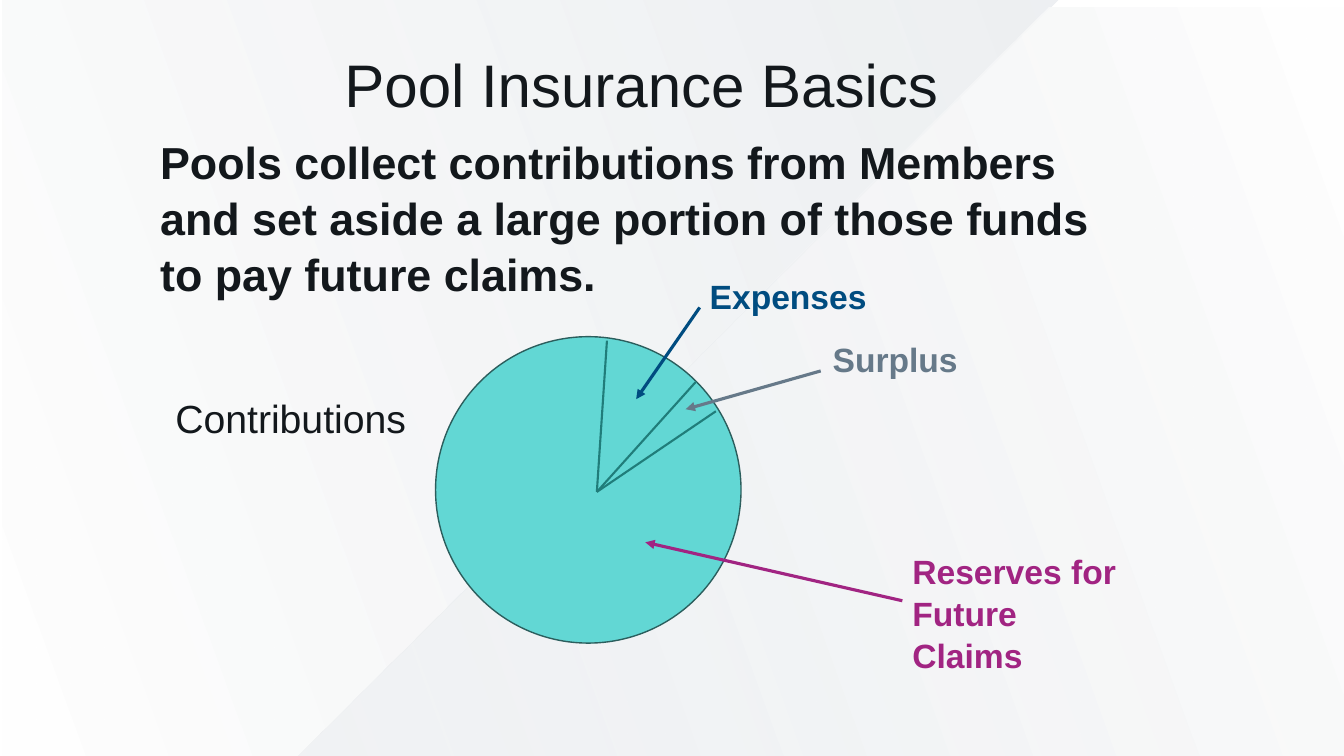
from pptx import Presentation
from pptx.dml.color import RGBColor as RGB
from pptx.enum.shapes import MSO_CONNECTOR as LINE, MSO_SHAPE as SHAPE
from pptx.enum.text import MSO_ANCHOR as ANCHOR, PP_ALIGN as ALIGN
from pptx.oxml.ns import qn
from pptx.util import Inches, Pt
from lxml.etree import SubElement

COLORS = {
    "ink": "13181C", "haze": "E0E4E8", "white": "FFFFFF",
    "pool": "62D7D4", "rim": "2B5E5D", "slice": "207D7A",
    "expenses": "004C80", "surplus": "667989", "reserves": "A12482",
}


def color(name):
    return RGB.from_string(COLORS[name])


class PoolSlide:
    """Draws styled elements on the current slide."""

    font = "Arial"

    def __init__(self, deck):
        self.shapes = deck.slides.add_slide(deck.slide_layouts[6]).shapes

    def text(self, words, left, top, width, height, size=24, ink="ink", bold=False,
             align=ALIGN.LEFT, spacing=1.04, anchor=ANCHOR.TOP, bottom=0.05):
        box = self.shapes.add_textbox(*map(Inches, (left, top, width, height)))
        frame = box.text_frame
        frame.word_wrap = True
        frame.vertical_anchor = anchor
        frame.margin_bottom = Inches(bottom)
        paragraph = frame.paragraphs[0]
        paragraph.text = words
        paragraph.alignment = align
        paragraph.line_spacing = spacing
        font = paragraph.runs[0].font
        font.name, font.size, font.bold = self.font, Pt(size), bold
        font.color.rgb = color(ink)

    def facet(self, corners, angle, opacities):
        points = [(Inches(x), Inches(y)) for x, y in corners]
        builder = self.shapes.build_freeform(*points[0])
        builder.add_line_segments(points[1:], close=True)
        facet = builder.convert_to_shape()
        facet.shadow.inherit = False
        facet.line.fill.background()
        facet.fill.gradient()
        facet.fill.gradient_angle = angle
        for stop, tint in zip(facet.fill.gradient_stops, ("haze", "white")):
            stop.color.rgb = color(tint)
        tints = facet._element.spPr.iter(qn("a:srgbClr"))
        for tint, opacity in zip(list(tints), opacities):
            SubElement(tint, qn("a:alpha"), val=str(opacity * 1000))

    def circle(self, left, top, width, height, fill, rim):
        circle = self.shapes.add_shape(
            SHAPE.OVAL, *map(Inches, (left, top, width, height)))
        circle.shadow.inherit = False
        circle.fill.solid()
        circle.fill.fore_color.rgb = color(fill)
        circle.line.color.rgb = color(rim)
        circle.line.width = Pt(1)

    def line(self, start, end, ink, width=1.5, arrow=False):
        line = self.shapes.add_connector(
            LINE.STRAIGHT, *map(Inches, (*start, *end)))
        line.line.color.rgb = color(ink)
        line.line.width = Pt(width)
        if arrow:
            SubElement(line.line._get_or_add_ln(), qn("a:tailEnd"), type="triangle")
        SubElement(line._element.spPr, qn("a:effectLst"))


def main():
    deck = Presentation()
    deck.slide_width, deck.slide_height = Inches(13.33), Inches(7.5)
    slide = PoolSlide(deck)

    slide.facet([(0.03, 0), (10.5, 0), (2.96, 7.5), (0.03, 7.5)], 200, (54, 80))
    slide.facet([(10.4, 0.08), (13.33, 0.08), (13.33, 7.58), (2.86, 7.58)], 20, (43, 100))

    slide.text("Pool Insurance Basics", 1.49, 0.47, 9.74, 0.89, size=42.9,
               align=ALIGN.CENTER, spacing=0.9, anchor=ANCHOR.MIDDLE, bottom=0.13)
    slide.text("Pools collect contributions from Members and set aside a large "
               "portion of those funds to pay future claims.",
               1.49, 1.27, 9.54, 1.65, size=32, bold=True)
    slide.text("Contributions", 1.64, 3.84, 2.59, 0.57, size=28)

    slide.circle(4.32, 3.34, 3.03, 3.04, "pool", "rim")
    hub = (5.92, 4.88)
    for edge in ((6.02, 3.38), (6.9, 3.79), (7.1, 4.08)):
        slide.line(edge, hub, "slice")

    callouts = [
        ("Expenses", "expenses", (6.94, 2.67), 0.5, (6.94, 3.05), (6.31, 3.96)),
        ("Surplus", "surplus", (8.16, 3.3), 0.5, (8.14, 3.68), (6.8, 4.06)),
        ("Reserves for Future Claims", "reserves", (8.95, 5.4), 1.31,
         (8.95, 5.96), (6.4, 5.38)),
    ]
    for label, ink, corner, height, start, tip in callouts:
        slide.line(start, tip, ink, width=2.25, arrow=True)
        slide.text(label, *corner, 2.22, height, ink=ink, bold=True)

    deck.save("out.pptx")


if __name__ == "__main__":
    main()
